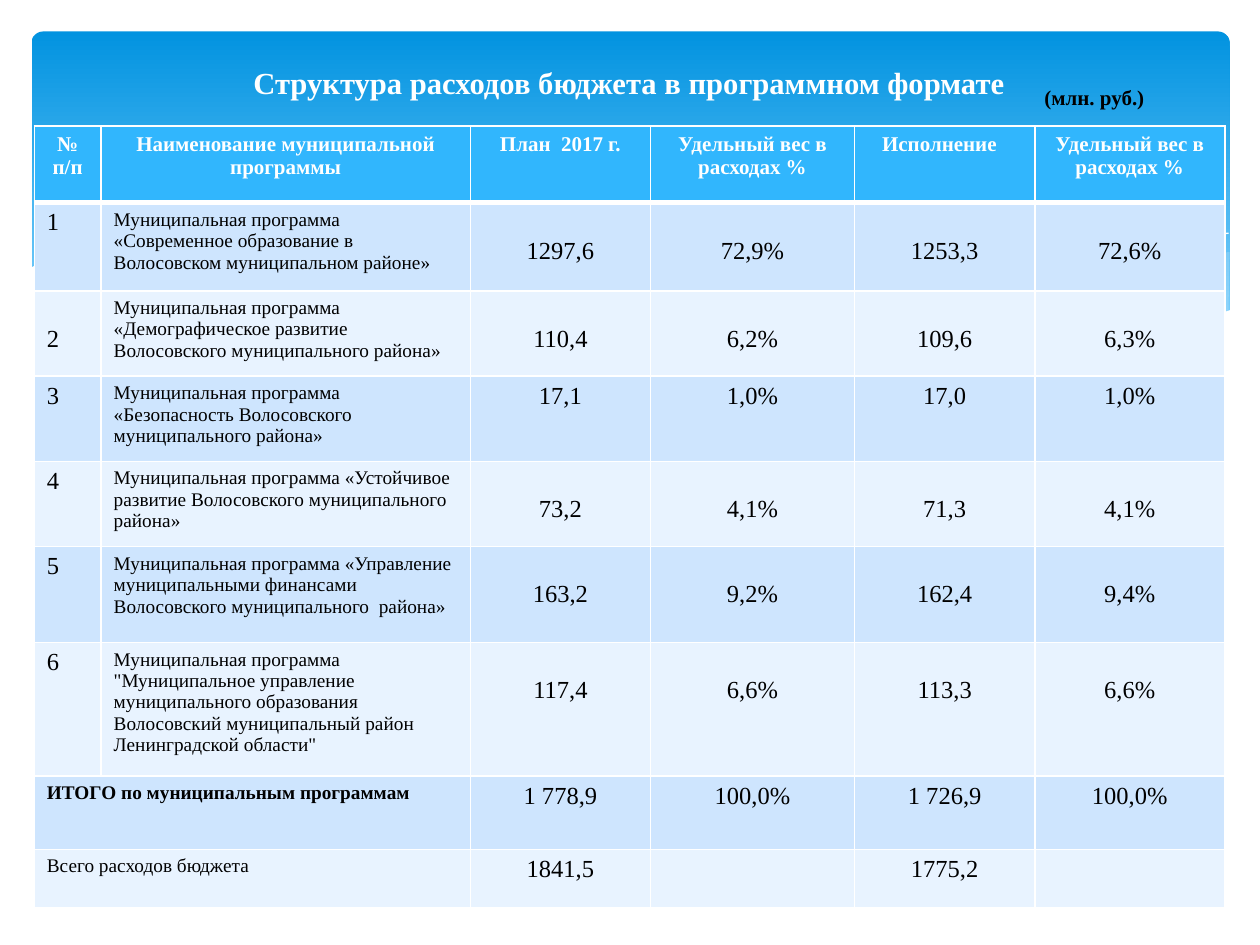
import pptx
import pptx.chart.data
import pptx.dml.color
import pptx.enum.shapes
import pptx.enum.text
import pptx.oxml
import pptx.oxml.ns
import pptx.util

Pt = pptx.util.Pt
ALIGN = pptx.enum.text.PP_ALIGN
ANCHOR = pptx.enum.text.MSO_ANCHOR
FONT = "Times New Roman"
WHITE, BLACK, PALE_WAVE = "FFFFFF", "000000", "C6E7FC"
HEADER_FILL, BANDS = "31B6FD", ("CEE5FE", "E8F3FF")

COLUMN_WIDTHS = (38.2, 211, 103, 116.6, 103, 108.6)
ROW_HEIGHTS = (43.9, 50.4, 48.7, 48.7, 48.7, 54.8, 76.2, 42, 33.6)
CELL_MARGIN = 3.6
LINE_DROP = 16.1  # one line of 14 pt text

HEADERS = ("№\nп/п", "Наименование муниципальной программы", "План  2017 г.",
           "Удельный вес в расходах %", "Исполнение  ", "Удельный вес в расходах %")
PROGRAMS = (
    ("1", "Муниципальная программа  «Современное образование в Волосовском муниципальном районе»",
     "1297,6", "72,9%", "1253,3", "72,6%"),
    ("2", "Муниципальная программа «Демографическое развитие Волосовского муниципального района»",
     "110,4", "6,2%", "109,6", "6,3%"),
    ("3", "Муниципальная программа «Безопасность Волосовского муниципального района»",
     "17,1", "1,0%", "17,0", "1,0%"),
    ("4", "Муниципальная программа «Устойчивое развитие Волосовского муниципального  района»",
     "73,2", "4,1%", "71,3", "4,1%"),
    ("5", "Муниципальная программа «Управление муниципальными финансами  Волосовского муниципального  района»",
     "163,2", "9,2%", "162,4", "9,4%"),
    ("6", "Муниципальная программа \"Муниципальное управление муниципального образования "
     "Волосовский муниципальный район Ленинградской области\"",
     "117,4", "6,6%", "113,3", "6,6%"),
)
TOTALS = (
    ("ИТОГО по муниципальным программам", "", "1 778,9", "100,0%", "1 726,9", "100,0%"),
    ("Всего расходов бюджета", "", "1841,5", "", "1775,2", ""),
)

# Wave outlines, in points
RIGHT_WAVE = ((702, 144), (662, 151), (620, 160.5), (561, 174), (508, 185), (476, 190.8),
              (518, 195), (562, 198.5), (607, 199.7), (646, 197.5), (674, 191),
              (702, 178), (702.7, 144))
MIDDLE_WAVE = ((643, 196.6), (581, 187), (508, 173), (453, 160), (410, 149.5), (370, 142.5),
               (318, 136), (274, 133.2), (236, 134.6), (206, 137.5), (246, 143), (291, 152),
               (353, 167), (407, 178.6), (457, 187.9), (500, 194.4), (548, 199), (589, 200),
               (624, 198.7))
LONG_CURVE = ((222.5, 140.4), (254, 136.8), (289, 134.6), (324, 135.4), (367, 138.2),
              (419, 144), (479, 153.4), (547, 167.8), (598, 180.7), (653, 195.8))
SHORT_CURVE = ((441, 185), (500, 169.2), (559, 155.5), (623, 143.3), (665, 138.2), (702, 133.2))
WHITE_WAVE = ((703.4, 177), (670, 188.6), (630, 195.1), (582, 199.4), (523, 198), (453, 190),
              (382, 176.4), (322, 158.4), (300, 153.4), (245, 141.8), (194, 135.4),
              (152, 132.5), (116, 132.5), (86, 134.6), (61, 139), (42.5, 143.3),
              (29, 147.6), (16.6, 153.4), (16.6, 237), (703.4, 237))


def color(code):
    return pptx.dml.color.RGBColor.from_string(code)


def write(frame, text, align, **formats):
    """Put each line of text in its own paragraph with the given font format."""
    formats = {"name": FONT, "bold": False, **formats}
    ink = formats.pop("ink", BLACK)
    for index, line in enumerate(text.split("\n")):
        para = frame.paragraphs[0] if index == 0 else frame.add_paragraph()
        para.alignment = align
        span = para.add_run()
        span.text = line
        for key, value in formats.items():
            setattr(span.font, key, value)
        span.font.color.rgb = color(ink)


def add_panel(page):
    panel = page.shapes.add_shape(pptx.enum.shapes.MSO_SHAPE.ROUNDED_RECTANGLE,
                                  Pt(18), Pt(18), Pt(684.7), Pt(194.4))
    panel.adjustments[0] = 0.034
    panel.shadow.inherit = False
    panel.line.fill.background()
    panel.fill.gradient()
    panel.fill.gradient_angle = 270
    for stop, (position, code) in zip(panel.fill.gradient_stops,
                                      ((0, "0293E0"), (0.9, "83D3FE"))):
        stop.position = position
        stop.color.rgb = color(code)


def add_wave(page, points, fill=None, opacity=100):
    """Draw a filled wave, or an open white hairline when there is no fill."""
    corners = [(Pt(x), Pt(y)) for x, y in points]
    builder = page.shapes.build_freeform(*corners[0], scale=1.0)
    builder.add_line_segments(corners[1:], close=fill is not None)
    wave = builder.convert_to_shape()
    wave.shadow.inherit = False
    if fill is None:
        wave.fill.background()
        wave.line.color.rgb = color(WHITE)
        wave.line.width = Pt(0)
        return
    wave.line.fill.background()
    wave.fill.solid()
    wave.fill.fore_color.rgb = color(fill)
    if opacity < 100:
        tint = wave.element.find(".//" + pptx.oxml.ns.qn("a:srgbClr"))
        tint.append(pptx.oxml.parse_xml(
            f'<a:alpha {pptx.oxml.ns.nsdecls("a")} val="{opacity * 1000}"/>'))


def set_borders(cell, bottom):
    properties = cell._tc.get_or_add_tcPr()
    widths = {"lnL": 1, "lnR": 1, "lnT": 1, "lnB": bottom}
    for index, (side, width) in enumerate(widths.items()):
        properties.insert(index, pptx.oxml.parse_xml(
            f'<a:{side} {pptx.oxml.ns.nsdecls("a")} w="{Pt(width)}">'
            f'<a:solidFill><a:srgbClr val="{WHITE}"/></a:solidFill></a:{side}>'))


def fill_cell(cell, text, fill, align=ALIGN.LEFT, dropped=False, bottom=1, **formats):
    cell.fill.solid()
    cell.fill.fore_color.rgb = color(fill)
    cell.margin_top = Pt(CELL_MARGIN + (LINE_DROP if dropped else 0))
    set_borders(cell, bottom)
    if text:
        write(cell.text_frame, text, align, **formats)


def add_budget_table(page):
    rows = PROGRAMS + TOTALS
    table = page.shapes.add_table(len(ROW_HEIGHTS), len(COLUMN_WIDTHS), Pt(19.6), Pt(72),
                                  Pt(sum(COLUMN_WIDTHS)), Pt(sum(ROW_HEIGHTS))).table
    for column, width in zip(table.columns, COLUMN_WIDTHS):
        column.width = Pt(width)
    for row, height in zip(table.rows, ROW_HEIGHTS):
        row.height = Pt(height)

    for index, text in enumerate(HEADERS):
        fill_cell(table.cell(0, index), text, HEADER_FILL, ALIGN.CENTER, bottom=3,
                  size=Pt(12), bold=True, ink=WHITE)

    for number, values in enumerate(rows, start=1):
        is_total = number > len(PROGRAMS)
        values_dropped = not is_total and number != 3
        for index, text in enumerate(values):
            is_value = index > 1
            is_name = index == 1 or (is_total and index == 0)
            fill_cell(table.cell(number, index), text, BANDS[(number - 1) % 2],
                      ALIGN.CENTER if is_value else ALIGN.LEFT,
                      dropped=values_dropped if is_value else (number, index) == (2, 0),
                      size=Pt(11 if is_name else 14),
                      bold=is_name and number == len(PROGRAMS) + 1)
        if is_total:
            table.cell(number, 0).merge(table.cell(number, 1))


def format_title(page):
    title = page.shapes.title
    bounds = {"left": 35.3, "top": 21.6, "width": 648.7, "height": 50.4}
    for key, value in bounds.items():
        setattr(title, key, Pt(value))
    title.text_frame.vertical_anchor = ANCHOR.MIDDLE
    write(title.text_frame, "Структура расходов бюджета в программном формате",
          ALIGN.CENTER, size=Pt(17.5), bold=True, ink=WHITE)
    page.shapes.element.append(title.element)  # in front of the panel


def add_unit_note(page):
    box = page.shapes.add_textbox(Pt(589.7), Pt(44.6), Pt(93.6), Pt(21.6))
    box.text_frame.word_wrap = True
    write(box.text_frame, "(млн. руб.)", ALIGN.LEFT, size=Pt(12), bold=True)


def main():
    deck = pptx.Presentation()
    deck.slide_width, deck.slide_height = Pt(720), Pt(540)
    page = deck.slides.add_slide(deck.slide_layouts[5])

    # Background panel and waves
    add_panel(page)
    add_wave(page, RIGHT_WAVE, PALE_WAVE, 29)
    add_wave(page, MIDDLE_WAVE, PALE_WAVE, 40)
    add_wave(page, LONG_CURVE)
    add_wave(page, SHORT_CURVE)
    add_wave(page, WHITE_WAVE, WHITE)

    # Content
    add_budget_table(page)
    format_title(page)
    add_unit_note(page)
    deck.save("out.pptx")


if __name__ == "__main__":
    main()
